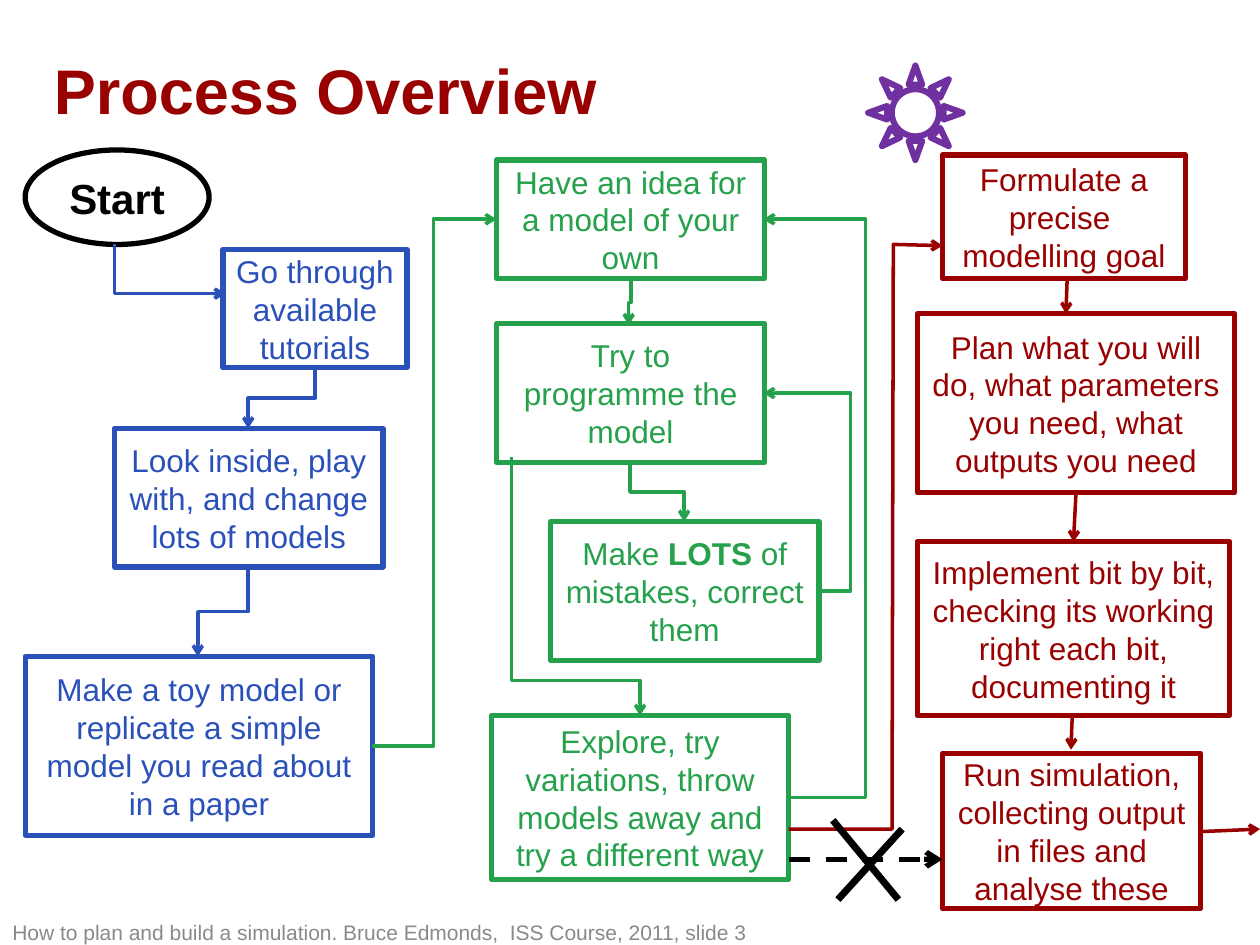
import pptx
import pptx.dml.color
import pptx.enum.dml
import pptx.enum.shapes
import pptx.enum.text
import pptx.oxml
import pptx.oxml.ns
import pptx.util

PX = 9144  # EMU in one px, 100 px to the inch
COLOURS = {"red": "990000", "blue": "2A50BA", "green": "25A14B",
           "black": "000000", "purple": "7030A0", "grey": "898989"}
SHAPES = pptx.enum.shapes.MSO_SHAPE
CONNECTORS = pptx.enum.shapes.MSO_CONNECTOR


def emu(*lengths):
    return [round(length * PX) for length in lengths]


def rgb(colour):
    return pptx.dml.color.RGBColor.from_string(COLOURS[colour])


def set_values(target, values):
    for name, value in values.items():
        setattr(target, name, value)


def style_line(item, colour, width, arrow=False):
    item.line.color.rgb = rgb(colour)
    item.line.width = pptx.util.Pt(width)
    if arrow:
        outline = item.line._get_or_add_ln()
        pptx.oxml.xmlchemy.OxmlElement  # namespace-aware factory
        head = pptx.oxml.xmlchemy.OxmlElement("a:tailEnd")
        head.set("type", "arrow")
        outline.append(head)


def write_text(shape, runs, colour, size, bold=False, centred=False):
    """Fill a shape with one paragraph of (text, bold) runs or a plain string."""
    set_values(shape.text_frame, {
        "word_wrap": True,
        "vertical_anchor": pptx.enum.text.MSO_ANCHOR.MIDDLE})
    paragraph = shape.text_frame.paragraphs[0]
    alignment = pptx.enum.text.PP_ALIGN
    paragraph.alignment = alignment.CENTER if centred else alignment.LEFT
    for text, run_bold in [(runs, bold)] if isinstance(runs, str) else runs:
        run = paragraph.add_run()
        run.text = text
        set_values(run.font, {"name": "Arial", "size": pptx.util.Pt(size), "bold": run_bold})
        run.font.color.rgb = rgb(colour)


class Region:
    """Part of the slide whose items are placed from its top left corner."""

    def __init__(self, slide, left, top, colour):
        self.shapes = slide.shapes
        self.left, self.top, self.colour = left, top, colour

    def place(self, x, y):
        return self.left + x, self.top + y

    def shape(self, preset, box, width=3):
        shape = self.shapes.add_shape(
            preset, *emu(*self.place(*box[:2]), *box[2:]))
        shape.shadow.inherit = False
        shape.fill.background()
        style_line(shape, self.colour, width)
        return shape

    def step(self, box, runs):
        write_text(self.shape(SHAPES.RECTANGLE, box), runs, self.colour, 18, centred=True)

    def connect(self, kind, start, end, width=2, arrow=True):
        connector = self.shapes.add_connector(kind, *emu(*start, *end))
        connector._element.spPr.append(pptx.oxml.xmlchemy.OxmlElement("a:effectLst"))
        style_line(connector, self.colour, width, arrow)
        return connector

    def straight(self, start, end, width=2, arrow=True):
        return self.connect(CONNECTORS.STRAIGHT, self.place(*start),
                            self.place(*end), width, arrow)

    def across(self, start, end, turn):
        """Elbow that leaves sideways and turns at x = turn."""
        connector = self.connect(CONNECTORS.ELBOW, self.place(*start), self.place(*end))
        self.bend(connector, (turn - start[0]) / (end[0] - start[0]))

    def down(self, start, end, turn=None, corner=False):
        """Elbow that leaves downwards and turns at y = turn, or half way."""
        (x1, y1), (x2, y2) = self.place(*start), self.place(*end)
        middle_x, middle_y = (x1 + x2) / 2, (y1 + y2) / 2
        half_width, half_height = (x2 - x1) / 2, (y2 - y1) / 2
        connector = self.connect(
            CONNECTORS.ELBOW,
            (middle_x - half_height, middle_y + half_width),
            (middle_x + half_height, middle_y - half_width))
        connector._element.spPr.find(pptx.oxml.ns.qn("a:xfrm")).set("rot", "5400000")
        if corner:
            connector._element.spPr.find(
                pptx.oxml.ns.qn("a:prstGeom")).set("prst", "bentConnector2")
        elif turn is not None:
            self.bend(connector, (turn - start[1]) / (end[1] - start[1]))

    def bend(self, connector, share):
        guide = pptx.oxml.xmlchemy.OxmlElement("a:gd")
        guide.set("name", "adj1")
        guide.set("fmla", f"val {round(share * 100000)}")
        geometry = connector._element.spPr.find(pptx.oxml.ns.qn("a:prstGeom"))
        geometry.find(pptx.oxml.ns.qn("a:avLst")).append(guide)


def add_line_of_text(slide, box, text, colour, size, bold=False):
    textbox = slide.shapes.add_textbox(*emu(*box))
    set_values(textbox.text_frame, {"margin_top": 0, "margin_bottom": 0})
    write_text(textbox, text, colour, size, bold)


def add_tutorials(slide, left, top):
    start = Region(slide, left, top, "black")
    write_text(start.shape(SHAPES.OVAL, (0, 0, 146, 75)), "Start",
               "black", 24, bold=True, centred=True)
    region = Region(slide, left, top, "blue")
    region.step((157, 79, 146, 94), "Go through available tutorials")
    region.step((71, 221, 213, 110), "Look inside, play with, and change lots of models")
    region.step((0, 402, 276, 142),
                "Make a toy model or replicate a simple model you read about in a paper")
    region.down((71, 75), (159, 114), corner=True)
    region.down((230, 173), (177, 221))
    region.down((177, 331), (137, 402))


def add_own_model(slide, left, top):
    region = Region(slide, left, top, "green")
    region.step((4, 0, 213, 94), "Have an idea for a model of your own")
    region.step((4, 130, 213, 110), "Try to programme the model")
    region.step((47, 287, 213, 110),
                [("Make ", False), ("LOTS", True), (" of mistakes, correct them", False)])
    region.step((0, 441, 236, 130),
                "Explore, try variations, throw models away and try a different way")
    region.down((111, 95), (109, 131))
    region.down((110, 240), (153, 287))
    region.down((16, 236), (118, 441), turn=413)
    region.across((260, 342), (216, 185), turn=285)
    region.across((236, 506), (216, 47), turn=297)
    region.across((-95, 465), (4, 47), turn=-46)


def add_formal_model(slide, left, top):
    region = Region(slide, left, top, "red")
    region.step((20, 0, 193, 98), "Formulate a precise  modelling goal")
    region.step((0, 126, 252, 142),
                "Plan what you will do, what parameters you need, what outputs you need")
    region.step((0, 307, 248, 138),
                "Implement bit by bit, checking its working right each bit, documenting it")
    region.step((20, 475, 205, 123),
                "Run simulation, collecting output in files and analyse these")
    for start, end in [((119, 98), (118, 126)), ((126, 268), (124, 307)),
                       ((123, 445), (122, 472)), ((225, 537), (272, 535))]:
        region.straight(start, end)
    route = [region.place(*point) for point in
             [(-102, 535), (-20, 535), (-19, 71), (20, 72)]]
    builder = slide.shapes.build_freeform(*route[0], scale=PX)
    builder.add_line_segments(route[1:], close=False)
    link = builder.convert_to_shape()
    link.shadow.inherit = False
    link.fill.background()
    style_line(link, "red", 2, arrow=True)


def add_blocked_shortcut(slide, left, top):
    region = Region(slide, left, top, "black")
    shortcut = region.straight((0, 31), (122, 31), width=3, arrow=False)
    shortcut.line.dash_style = pptx.enum.dml.MSO_LINE.DASH
    style_line(shortcut, "black", 3, arrow=True)
    for start, end in [((87, 63), (35, 0)), ((39, 63), (90, 7))]:
        region.straight(start, end, width=4, arrow=False)


def main():
    presentation = pptx.Presentation()
    presentation.slide_width, presentation.slide_height = emu(1000, 750)
    slide = presentation.slides.add_slide(presentation.slide_layouts[6])
    add_line_of_text(slide, (33, 25, 842, 92), "Process Overview", "red", 36, bold=True)
    add_line_of_text(
        slide, (0, 729, 1000, 21),
        "How to plan and build a simulation. Bruce Edmonds,  ISS Course, 2011, slide 3",
        "grey", 12)
    add_tutorials(slide, 20, 119)
    add_own_model(slide, 390, 127)
    add_formal_model(slide, 728, 123)
    Region(slide, 689, 52, "purple").shape(SHAPES.SUN, (0, 0, 75, 75), width=3.5)
    add_blocked_shortcut(slide, 626, 651)
    presentation.save("out.pptx")


if __name__ == "__main__":
    main()
